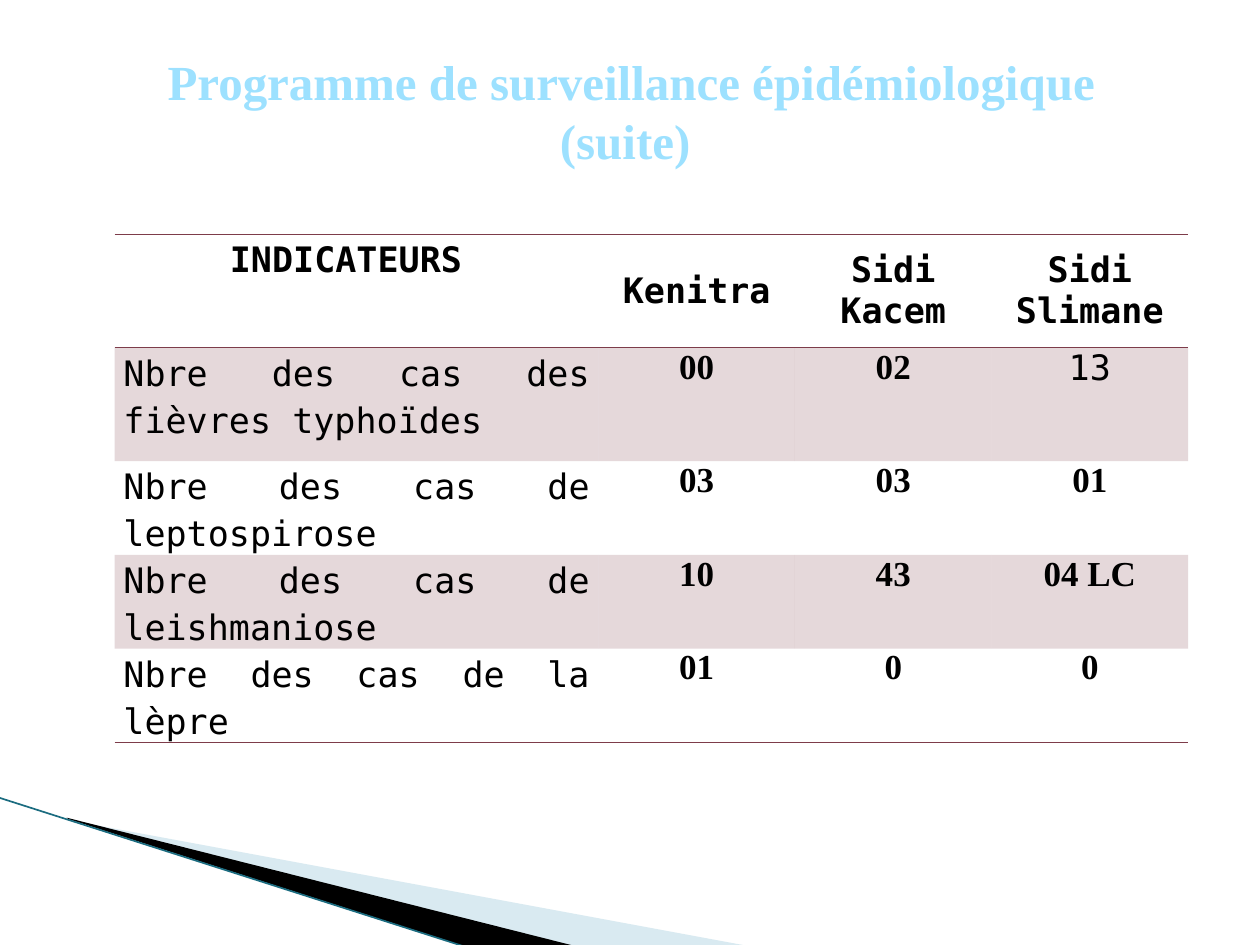
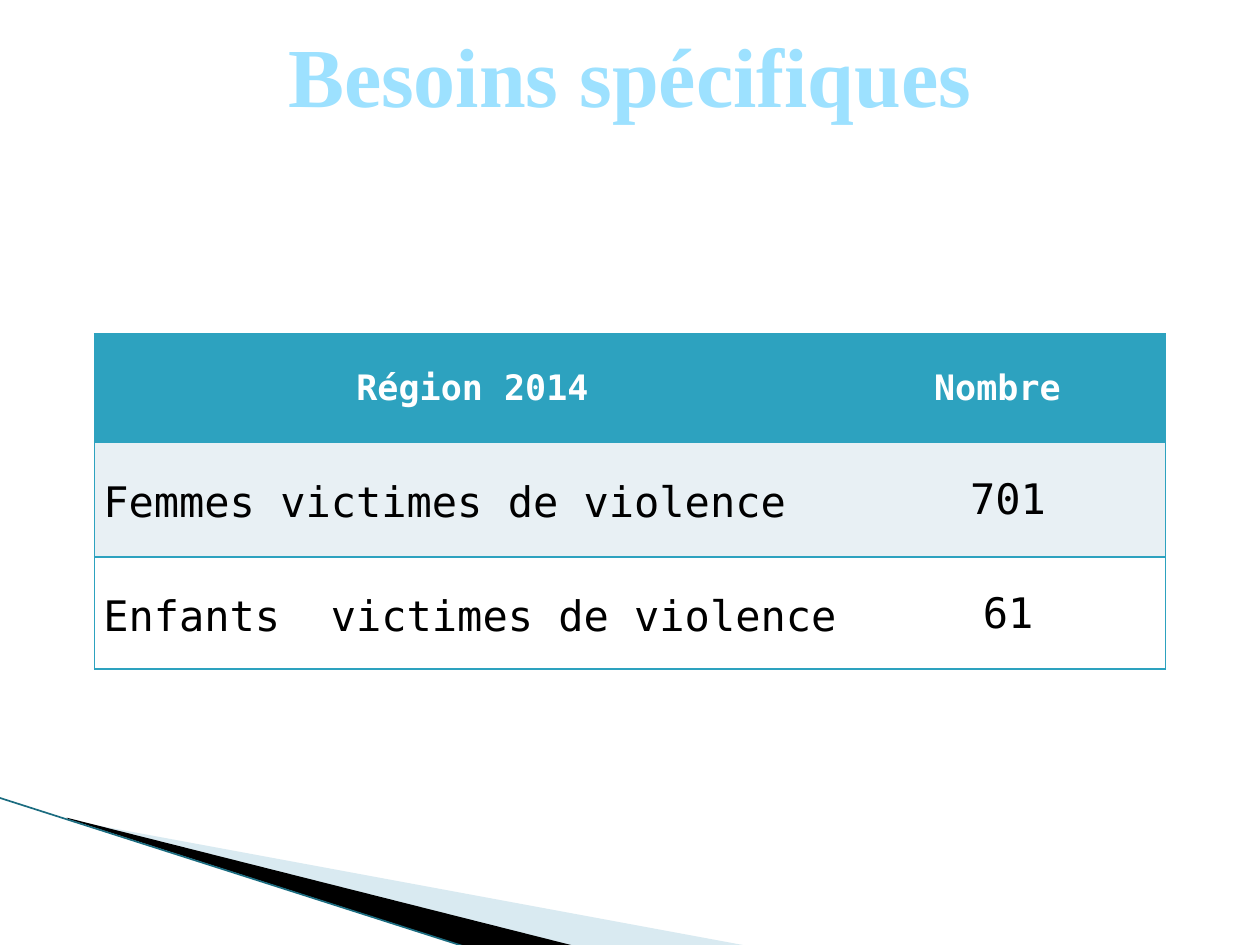
from dataclasses import dataclass, replace
from typing import Optional

from lxml.etree import SubElement
from pptx import Presentation
from pptx.dml.color import RGBColor
from pptx.enum.shapes import MSO_CONNECTOR
from pptx.enum.text import MSO_ANCHOR, MSO_AUTO_SIZE, PP_ALIGN
from pptx.oxml.ns import qn
from pptx.util import Inches, Pt

COLOURS = {
    "title": "9DE1FF",
    "text": "000000",
    "white": "FFFFFF",
    "wine": "7D3C4A",
    "teal": "2DA2BF",
    "pale": "E8F0F4",
    "wedge_light": "A0CBDC",
    "wedge_dark": "000000",
    "wedge_edge": "1B6C80",
}
MONO = "DejaVu Sans Mono"
SERIF = "Times New Roman"
PLAIN_TABLE_STYLE = "{2D5ABB26-0587-4C30-8999-92F81FD0307C}"


@dataclass(frozen=True)
class Fill:
    """A named colour and its opacity in percent."""
    colour: str
    opacity: int = 100


@dataclass(frozen=True)
class Wedge:
    """A corner wedge given by its points in inches."""
    points: tuple
    fill: Fill


@dataclass(frozen=True)
class Title:
    """A slide title with its frame in inches."""
    text: str
    frame: tuple
    size: int
    anchor: MSO_ANCHOR


@dataclass(frozen=True)
class CellStyle:
    """The look of one table cell; insets run left, top, right, bottom."""
    size: int = 20
    font: str = MONO
    bold: bool = False
    colour: str = "text"
    align: PP_ALIGN = PP_ALIGN.CENTER
    spacing: float = 1.0
    anchor: MSO_ANCHOR = MSO_ANCHOR.MIDDLE
    insets: tuple = (0.1, 0.05, 0.1, 0.05)
    fill: Optional[Fill] = None
    edges: str = ""
    edge_colour: str = "teal"


@dataclass(frozen=True)
class Grid:
    """A table: position, column widths, row heights and (text, style) rows."""
    left: float
    top: float
    widths: tuple
    heights: tuple
    rows: list


WEDGES = (
    Wedge(((0.55, 6.51), (5.95, 7.51), (4.56, 7.51), (0.55, 6.5)), Fill("wedge_light", 40)),
    Wedge(((0.53, 6.49), (4.57, 7.51), (3.72, 7.52), (0.54, 6.5)), Fill("wedge_dark")),
)
NARROW = (0.07, 0, 0.07, 0)
HAIR = (0.01, 0.01, 0.01, 0)


def rgb(name: str) -> RGBColor:
    """Look up a named colour."""
    return RGBColor.from_string(COLOURS[name])


def paint(target, properties, fill: Optional[Fill]) -> None:
    """Fill a shape or cell, with transparency where asked."""
    if fill is None:
        target.fill.background()
        return
    target.fill.solid()
    target.fill.fore_color.rgb = rgb(fill.colour)
    if fill.opacity < 100:
        colour = properties.find(qn("a:solidFill")).find(qn("a:srgbClr"))
        SubElement(colour, qn("a:alpha"), val=str(fill.opacity * 1000))


def format_text(frame, size: int, font: str, bold: bool, colour: str, align: PP_ALIGN,
                spacing: float = 1.0) -> None:
    """Format every paragraph and run of a text frame alike."""
    for para in frame.paragraphs:
        para.alignment = align
        para.line_spacing = spacing
        for span in para.runs:
            span.font.size = Pt(size)
            span.font.name = font
            span.font.bold = bold
            span.font.color.rgb = rgb(colour)


def set_edges(cell, edges: str, colour: str) -> None:
    """Draw the edges named by letter and leave the other sides bare."""
    properties = cell._tc.get_or_add_tcPr()
    for position, side in enumerate("LRTB"):
        line = SubElement(properties, qn(f"a:ln{side}"), w=str(Pt(1)))
        if side in edges:
            solid = SubElement(line, qn("a:solidFill"))
            SubElement(solid, qn("a:srgbClr"), val=COLOURS[colour])
        else:
            SubElement(line, qn("a:noFill"))
        properties.insert(position, line)


def draw_cell(cell, text: str, style: CellStyle) -> None:
    """Write and format one table cell."""
    cell.text_frame.text = text
    format_text(cell.text_frame, style.size, style.font, style.bold, style.colour,
                style.align, style.spacing)
    cell.vertical_anchor = style.anchor
    left, top, right, bottom = map(Inches, style.insets)
    cell.margin_left, cell.margin_top = left, top
    cell.margin_right, cell.margin_bottom = right, bottom
    paint(cell, cell._tc.get_or_add_tcPr(), style.fill)
    set_edges(cell, style.edges, style.edge_colour)


def draw_grid(page, grid: Grid) -> None:
    """Add a table with plain base style and draw its cells."""
    table = page.shapes.add_table(
        len(grid.heights), len(grid.widths), Inches(grid.left), Inches(grid.top),
        Inches(sum(grid.widths)), Inches(sum(grid.heights))).table
    table.first_row = table.horz_banding = False
    table._tbl.tblPr.find(qn("a:tableStyleId")).text = PLAIN_TABLE_STYLE
    for column, width in zip(table.columns, grid.widths):
        column.width = Inches(width)
    for row, height, contents in zip(table.rows, grid.heights, grid.rows):
        row.height = Inches(height)
        for cell, (text, style) in zip(row.cells, contents):
            draw_cell(cell, text, style)


def draw_corner(page) -> None:
    """Draw the wedges and the edge line of the lower left corner."""
    for wedge in WEDGES:
        start, *others = [(Inches(x), Inches(y)) for x, y in wedge.points]
        builder = page.shapes.build_freeform(*start)
        builder.add_line_segments(others, close=True)
        shape = builder.convert_to_shape()
        shape.shadow.inherit = False
        paint(shape, shape._element.spPr, wedge.fill)
        shape.line.fill.background()
    edge = page.shapes.add_connector(
        MSO_CONNECTOR.STRAIGHT, Inches(-0.01), Inches(6.33), Inches(3.71), Inches(7.52))
    edge.line.color.rgb = rgb("wedge_edge")
    edge.line.width = Pt(0.95)
    SubElement(edge._element.spPr, qn("a:effectLst"))


def draw_title(page, title: Title) -> None:
    """Place and format the title placeholder."""
    box = page.shapes.title
    box.left, box.top, box.width, box.height = map(Inches, title.frame)
    frame = box.text_frame
    frame.text = title.text
    frame.word_wrap = True
    frame.auto_size = MSO_AUTO_SIZE.NONE
    frame.vertical_anchor = title.anchor
    format_text(frame, title.size, SERIF, True, "title", PP_ALIGN.CENTER)


def add_page(deck, title: Title, grid: Grid) -> None:
    """Add one slide with corner, title and table."""
    page = deck.slides.add_slide(deck.slide_layouts[5])
    draw_corner(page)
    draw_title(page, title)
    draw_grid(page, grid)


def surveillance_grid() -> Grid:
    """Describe the table of disease cases by province."""
    head = CellStyle(bold=True, edges="TB", edge_colour="wine")
    first_head = replace(head, anchor=MSO_ANCHOR.TOP, insets=NARROW, spacing=1.15)
    count = CellStyle(font=SERIF, bold=True, anchor=MSO_ANCHOR.TOP, insets=NARROW,
                      edge_colour="wine")
    plain_count = replace(count, font=MONO, bold=False)
    label = replace(plain_count, align=PP_ALIGN.JUSTIFY, spacing=1.15)
    cases = (
        ("Nbre des cas des fièvres typhoïdes", "00", "02", "13"),
        ("Nbre des cas de leptospirose", "03", "03", "01"),
        ("Nbre des cas de leishmaniose ", "10", "43", "04 LC"),
        ("Nbre des cas de la lèpre", "01", "0", "0"),
    )
    provinces = ("Kenitra", "Sidi Kacem", "Sidi Slimane")
    rows = [[("INDICATEURS ", first_head)] + [(name, head) for name in provinces]]
    for index, texts in enumerate(cases):
        fill = Fill("wine", 20) if index % 2 == 0 else None
        edges = "T" if index == 0 else "B" if index == len(cases) - 1 else ""
        last = plain_count if index == 0 else count
        styles = (label, count, count, last)
        rows.append([(text, replace(style, fill=fill, edges=edges))
                     for text, style in zip(texts, styles)])
    return Grid(0.91, 1.86, (3.84, 1.56, 1.56, 1.56), (0.9, 0.9, 0.74, 0.74, 0.74), rows)


def needs_grid() -> Grid:
    """Describe the table of victims of violence."""
    head = CellStyle(bold=True, colour="white", fill=Fill("teal"), edges="LTB")
    label = CellStyle(size=24, align=PP_ALIGN.LEFT, spacing=1.15, insets=NARROW, edges="LTB")
    count = CellStyle(size=24, insets=HAIR, edges="RTB")
    rows = [[("Région 2014", head),
             ("Nombre ", replace(head, insets=(0, 0, 0, 0), edges="RTB"))]]
    victims = (
        ("Femmes victimes de violence", "701", "pale"),
        ("Enfants  victimes de violence", "61", "white"),
    )
    for group, number, colour in victims:
        rows.append([(group, replace(label, fill=Fill(colour))),
                     (number, replace(count, fill=Fill(colour)))])
    return Grid(0.75, 2.65, (6, 2.5), (0.86, 0.91, 0.89), rows)


def main() -> None:
    """Build and save the deck."""
    deck = Presentation()
    deck.slide_width, deck.slide_height = Inches(10), Inches(7.5)
    add_page(deck, Title("Programme de surveillance épidémiologique\n(suite) ",
                         (0.75, 0.36, 8.52, 1.04), 28, MSO_ANCHOR.TOP), surveillance_grid())
    add_page(deck, Title("Besoins spécifiques", (0, 0, 10, 1.17), 48, MSO_ANCHOR.MIDDLE),
             needs_grid())
    deck.save("out.pptx")


if __name__ == "__main__":
    main()
